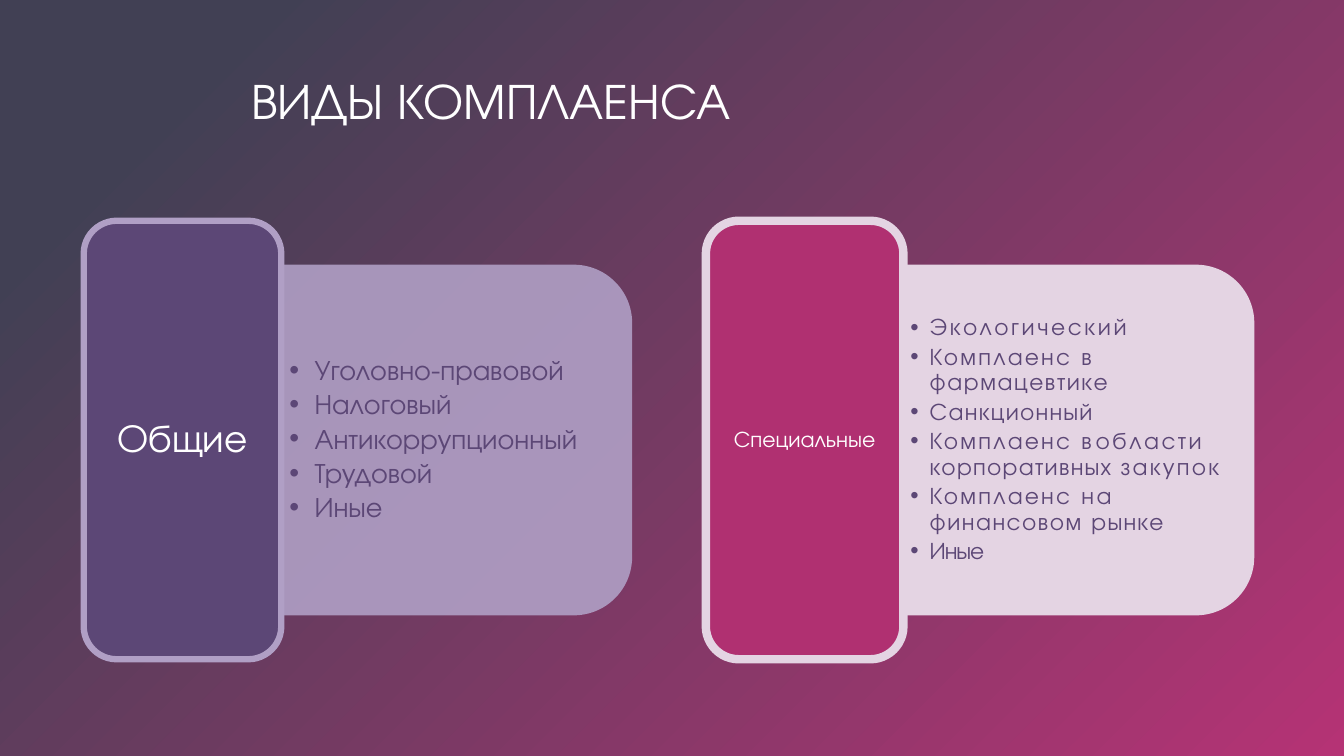
import pptx
import pptx.util
from lxml import etree
from pptx.dml.color import RGBColor
from pptx.enum.shapes import MSO_SHAPE
from pptx.enum.text import MSO_ANCHOR, MSO_AUTO_SIZE, PP_ALIGN
from pptx.oxml import parse_xml
from pptx.oxml.ns import nsdecls, qn

SLIDE_WIDTH = pptx.util.Inches(13.33)
SLIDE_HEIGHT = pptx.util.Inches(7.5)

# Shares of the slide, in percent of its width or height
GROUP_LEFT, GROUP_PITCH = 6.23, 46.29
CARD_WIDTH, CARD_HEIGHT = 14.7, 58
PANEL_WIDTH, PANEL_HEIGHT = 26.1, 46.4
LIST_WIDTH, LIST_HEIGHT = 24.83, 41.87
MIDDLE = 58.2


class Theme:
    font = "TeX Gyre Adventor"
    white, violet, pink = "FFFFFF", "5C4776", "B03071"
    lilac, pale = "B09FC5", "E4D4E3"
    glow, dusk = "B53375", "414054"
    title_size = 36


# Each list item is a sequence of (text, letter spacing in points)
GROUPS = [
    dict(name="Общие", name_size=28, fill=Theme.violet, tint=Theme.lilac,
         border=4.5, opacity=90, card_inset=0.12, list_inset=0.08,
         list_size=20, indent=0.25,
         items=[[(text, 0)] for text in (
             "Уголовно-правовой", "Налоговый", "Антикоррупционный",
             "Трудовой", "Иные")]),
    dict(name="Специальные", name_size=16, fill=Theme.pink, tint=Theme.pale,
         border=6, opacity=100, card_inset=0.07, list_inset=0.07,
         list_size=17, indent=0.19,
         items=[
             [("Экологический", 1.8)],
             [("Комплаенс ", 1.6), ("в ", -2), ("фармацевтике", 1.1)],
             [("Санкционный", 0.9)],
             [("Комплаенс ", 1.6), ("в ", -2), ("области ", 1.8),
              ("корпоративных ", 0.9), ("закупок", 1.6)],
             [("Комплаенс ", 1.6), ("на ", 1.9), ("финансовом ", 1.1),
              ("рынке", 0.9)],
             [("Иные", -0.7)],
         ]),
]


def across(percent):
    return round(SLIDE_WIDTH * percent / 100)


def down(percent):
    return round(SLIDE_HEIGHT * percent / 100)


def centred_box(left, width, height):
    """Left, top, width and height of a box centred on the MIDDLE line."""
    return across(left), down(MIDDLE - height / 2), across(width), down(height)


def place(shape, box):
    shape.left, shape.top, shape.width, shape.height = box


def style_font(font, size, color):
    font.name = Theme.font
    font.size = pptx.util.Pt(size)
    font.color.rgb = RGBColor.from_string(color)


def style_frame(frame, anchor, inset):
    frame.word_wrap = True
    frame.auto_size = MSO_AUTO_SIZE.NONE
    frame.vertical_anchor = anchor
    frame.margin_left = frame.margin_right = pptx.util.Inches(inset)
    frame.margin_top = frame.margin_bottom = pptx.util.Inches(inset / 2)


def paint_background(slide):
    fill = slide.background.fill
    fill.gradient()
    gradient = slide.background._cSld.find(".//" + qn("a:gradFill"))
    gradient.getparent().replace(gradient, parse_xml(
        f'<a:gradFill {nsdecls("a")} rotWithShape="1"><a:gsLst>'
        f'<a:gs pos="0"><a:srgbClr val="{Theme.glow}"/></a:gs>'
        f'<a:gs pos="87000"><a:srgbClr val="{Theme.dusk}"/></a:gs></a:gsLst>'
        '<a:path path="circle"><a:fillToRect l="100000" t="100000"/></a:path>'
        '</a:gradFill>'))


def write_title(slide, text):
    title = slide.shapes.title
    place(title, (across(17.93), down(8.53), across(80.04), down(9.47)))
    style_frame(title.text_frame, MSO_ANCHOR.TOP, 0.1)
    title.text_frame.text = text
    paragraph = title.text_frame.paragraphs[0]
    paragraph.alignment = PP_ALIGN.LEFT
    style_font(paragraph.font, Theme.title_size, Theme.white)


def add_filled_shape(slide, kind, box, color):
    shape = slide.shapes.add_shape(kind, *box)
    shape.shadow.inherit = False
    shape.fill.solid()
    shape.fill.fore_color.rgb = RGBColor.from_string(color)
    shape.line.fill.background()
    return shape


def add_panel(slide, left, group):
    panel = add_filled_shape(slide, MSO_SHAPE.ROUND_2_SAME_RECTANGLE,
                             centred_box(left, PANEL_WIDTH, PANEL_HEIGHT),
                             group["tint"])
    panel.rotation = 90
    if group["opacity"] < 100:
        color = panel._element.spPr.find(qn("a:solidFill"))[0]
        etree.SubElement(color, qn("a:alpha")).set(
            "val", str(group["opacity"] * 1000))


def add_card(slide, left, group):
    card = add_filled_shape(slide, MSO_SHAPE.ROUNDED_RECTANGLE,
                            centred_box(left, CARD_WIDTH, CARD_HEIGHT),
                            group["fill"])
    card.line.color.rgb = RGBColor.from_string(group["tint"])
    card.line.width = pptx.util.Pt(group["border"])
    style_frame(card.text_frame, MSO_ANCHOR.MIDDLE, group["card_inset"])
    card.text_frame.text = group["name"]
    paragraph = card.text_frame.paragraphs[0]
    paragraph.alignment = PP_ALIGN.CENTER
    paragraph.line_spacing = 0.9
    style_font(paragraph.font, group["name_size"], Theme.white)


def set_bullet(paragraph, indent):
    properties = paragraph._p.get_or_add_pPr()
    properties.set("marL", str(pptx.util.Inches(indent)))
    properties.set("indent", str(-pptx.util.Inches(indent)))
    etree.SubElement(properties, qn("a:buChar")).set("char", "•")


def write_list(placeholder, left, group):
    """Fill the placeholder and bring it in front of its panel."""
    place(placeholder, centred_box(left, LIST_WIDTH, LIST_HEIGHT))
    frame = placeholder.text_frame
    style_frame(frame, MSO_ANCHOR.MIDDLE, group["list_inset"])
    for index, item in enumerate(group["items"]):
        paragraph = frame.add_paragraph() if index else frame.paragraphs[0]
        set_bullet(paragraph, group["indent"])
        paragraph.line_spacing = 0.9
        paragraph.space_before = pptx.util.Pt(0)
        paragraph.space_after = pptx.util.Pt(group["list_size"] * 0.15)
        style_font(paragraph.font, group["list_size"], Theme.violet)
        for text, spacing in item:
            run = paragraph.add_run()
            run.text = text
            if spacing:
                run._r.get_or_add_rPr().set("spc", str(round(spacing * 100)))
    element = placeholder._element
    element.getparent().append(element)


def main():
    presentation = pptx.Presentation()
    presentation.slide_width = SLIDE_WIDTH
    presentation.slide_height = SLIDE_HEIGHT
    two_content = presentation.slide_layouts[3]
    slide = presentation.slides.add_slide(two_content)
    paint_background(slide)
    write_title(slide, "ВИДЫ КОМПЛАЕНСА")
    lists = list(slide.placeholders)[1:]
    for index, (placeholder, group) in enumerate(zip(lists, GROUPS)):
        card_left = GROUP_LEFT + index * GROUP_PITCH
        panel_left = card_left + CARD_WIDTH
        add_panel(slide, panel_left, group)
        write_list(placeholder, panel_left, group)
        add_card(slide, card_left, group)
    presentation.save("out.pptx")


if __name__ == "__main__":
    main()
